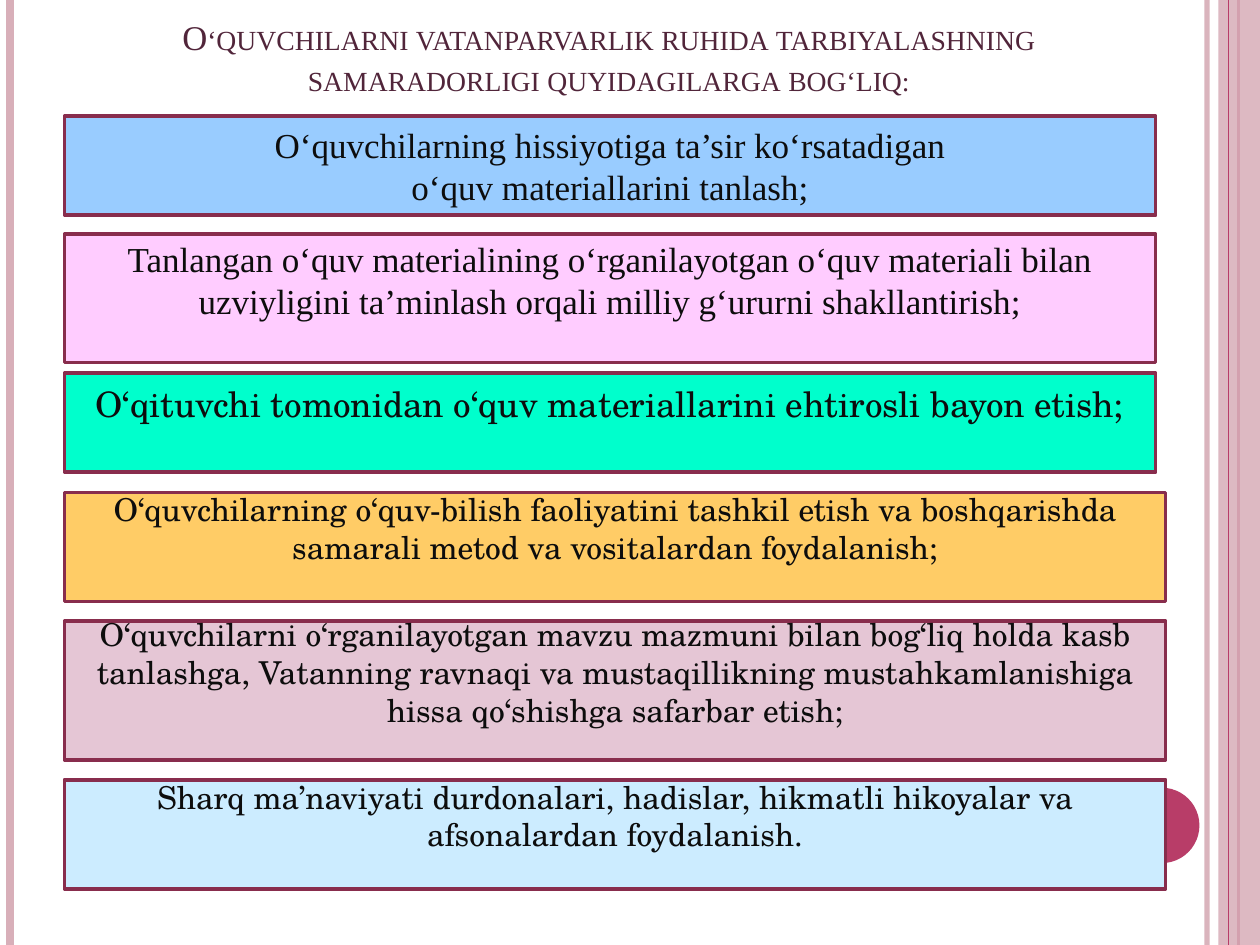
from lxml import etree
from pptx import Presentation
from pptx.dml.color import RGBColor
from pptx.enum.shapes import MSO_CONNECTOR, MSO_SHAPE
from pptx.enum.text import MSO_ANCHOR, PP_ALIGN
from pptx.oxml.ns import qn
from pptx.util import Cm, Pt

RECT, OVAL = MSO_SHAPE.RECTANGLE, MSO_SHAPE.OVAL
LINE = MSO_CONNECTOR.STRAIGHT
MID, BOTTOM = MSO_ANCHOR.MIDDLE, MSO_ANCHOR.BOTTOM
CENTER = PP_ALIGN.CENTER

TIMES, SCHOLA = "Times New Roman", "TeX Gyre Schola"
PINK, ROSE, WINE, INK, PLUM = "D8AFB9", "B83D68", "882D4D", "0D0D0D", "51253A"
WIDE, HIGH = 25.4, 19.05
LEFT = 1.3

TITLE = ("O‘quvchilarni vatanparvarlik ruhida tarbiyalashning "
         "samaradorligi quyidagilarga bog‘liq:")

# x in cm, colour, width in points, opacity in percent
RULES = [
    (24.33, PINK, 3, 93),
    (0.2, PINK, 4.5, 100),
    (24.97, ROSE, 1.5, 100),
    (24.77, ROSE, 0.75, 100),
]

# top, width, height in cm, fill, font, size, lower inset in cm, text
BOXES = [
    (2.34, 22, 2, "99CCFF", TIMES, 20, 0,
     "O‘quvchilarning hissiyotiga ta’sir ko‘rsatadigan\n"
     "o‘quv materiallarini tanlash;"),
    (4.72, 22, 2.59, "FFCCFF", TIMES, 20, 0.76,
     "Tanlangan o‘quv materialining o‘rganilayotgan o‘quv materiali bilan "
     "uzviyligini ta’minlash orqali milliy g‘ururni shakllantirish;"),
    (7.52, 22, 2, "00FFCC", SCHOLA, 20, 0.76,
     "O‘qituvchi tomonidan o‘quv materiallarini ehtirosli bayon etish;"),
    (9.93, 22.2, 2.2, "FFCC66", SCHOLA, 18, 0.76,
     "O‘quvchilarning o‘quv-bilish faoliyatini tashkil etish va boshqarishda "
     "samarali metod va vositalardan foydalanish;"),
    (12.52, 22.2, 2.8, "E5C6D5", SCHOLA, 18, 0.76,
     "O‘quvchilarni o‘rganilayotgan mavzu mazmuni bilan bog‘liq holda kasb "
     "tanlashga, Vatanning ravnaqi va mustaqillikning mustahkamlanishiga "
     "hissa qo‘shishga safarbar etish;"),
    (15.72, 22.2, 2.2, "CCECFF", SCHOLA, 18, 0.76,
     "Sharq ma’naviyati durdonalari, hadislar, hikmatli hikoyalar va "
     "afsonalardan foydalanish."),
]


def paint(fill, color, alpha=100):
    fill.solid()
    fill.fore_color.rgb = RGBColor.from_string(color)
    if alpha < 100:
        tone = fill._xPr.find(".//" + qn("a:srgbClr"))
        etree.SubElement(tone, qn("a:alpha")).set("val", str(alpha * 1000))


def write(shape, text, font, size, color, anchor, low):
    """Set centred text with the given lower inset in cm."""
    frame = shape.text_frame
    frame.text = text
    frame.word_wrap = True
    frame.vertical_anchor = anchor
    frame.margin_top, frame.margin_bottom = 0, Cm(low)
    for para in frame.paragraphs:
        para.alignment = CENTER
        for run in para.runs:
            run.font.name, run.font.size = font, Pt(size)
            run.font.color.rgb = RGBColor.from_string(color)


def add_rule(x, color, width, alpha):
    rule = shapes.add_connector(LINE, Cm(x), 0, Cm(x), Cm(HIGH))
    rule.line.width = Pt(width)
    paint(rule.line.fill, color, alpha)
    etree.SubElement(rule._element.spPr, qn("a:effectLst"))


def add_block(kind, x, y, w, h, color, alpha=100):
    block = shapes.add_shape(kind, Cm(x), Cm(y), Cm(w), Cm(h))
    block.shadow.inherit = False
    paint(block.fill, color, alpha)
    block.line.fill.background()
    return block


deck = Presentation()
deck.slide_width, deck.slide_height = Cm(WIDE), Cm(HIGH)
slide = deck.slides.add_slide(deck.slide_layouts[5])
shapes = slide.shapes

for rule in RULES[:3]:
    add_rule(*rule)
add_block(RECT, 24.56, 0, WIDE - 24.56, HIGH, PINK, 87)
add_rule(*RULES[3])
add_block(OVAL, 22.66, 15.88, 1.52, 1.52, ROSE)

title = shapes.title
title.left, title.top, title.width, title.height = Cm(1.9), 0, Cm(20.75), Cm(3.18)
write(title, TITLE, TIMES, 19.8, PLUM, BOTTOM, 1.19)
for run in title.text_frame.paragraphs[0].runs:
    run._r.get_or_add_rPr().set("cap", "small")

for top, wide, high, color, font, size, low, text in BOXES:
    box = add_block(RECT, LEFT, top, wide, high, color)
    paint(box.line.fill, WINE)
    box.line.width = Pt(2)
    write(box, text, font, size, INK, MID, low)

deck.save("out.pptx")
